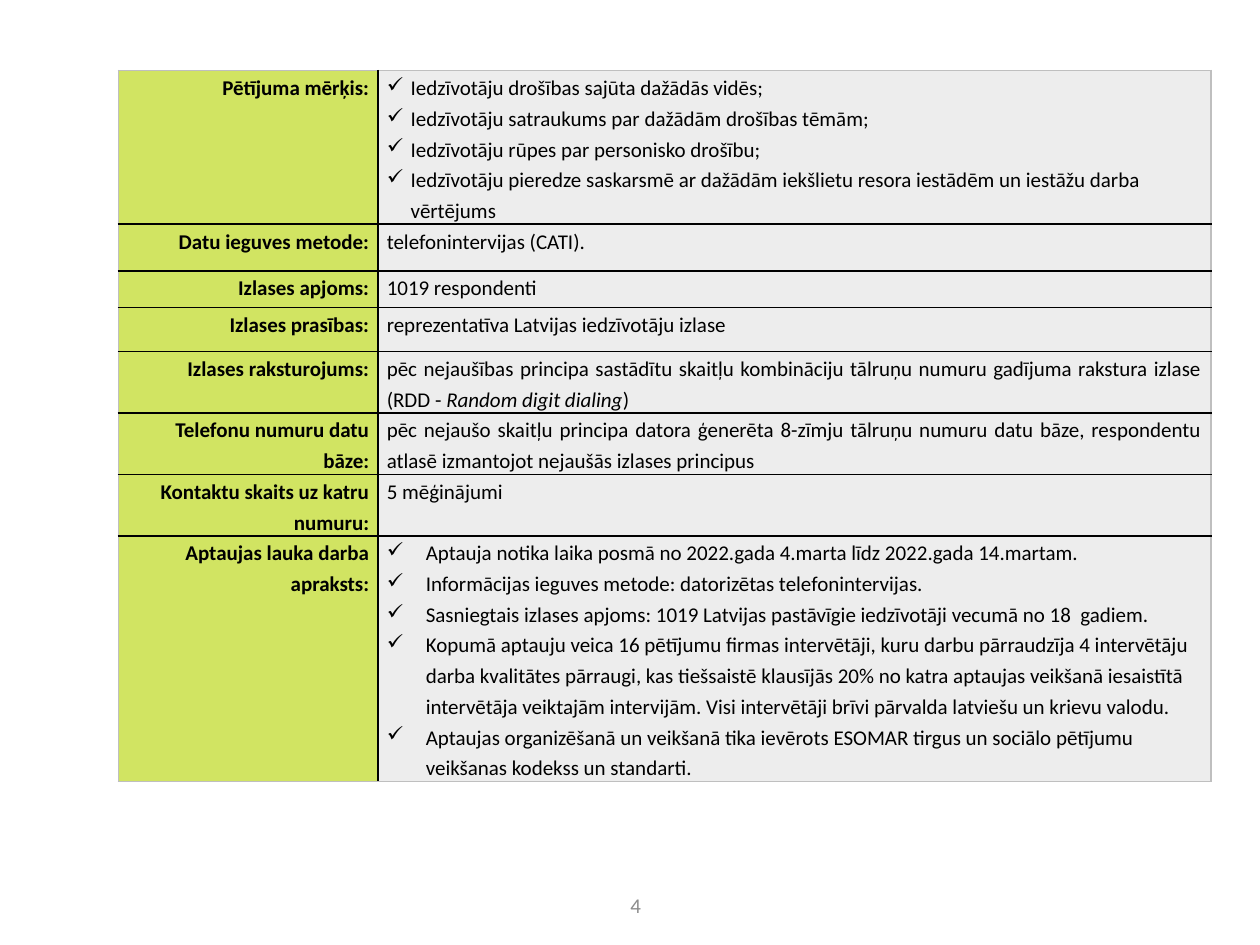
from lxml.etree import SubElement
from pptx import Presentation
from pptx.dml.color import RGBColor
from pptx.enum.text import MSO_ANCHOR, PP_ALIGN
from pptx.oxml.ns import qn
from pptx.util import Inches, Pt

BLACK = RGBColor(0x00, 0x00, 0x00)
LIME = RGBColor(0xD1, 0xE4, 0x62)
PALE = RGBColor(0xED, 0xED, 0xED)
EDGE = RGBColor(0xBF, 0xBF, 0xBF)
GREY = RGBColor(0x8C, 0x8C, 0x8C)

LEFT, RIGHT = PP_ALIGN.LEFT, PP_ALIGN.RIGHT
CENTER, FULL = PP_ALIGN.CENTER, PP_ALIGN.JUSTIFY
COLS = (2.06, 6.61)

# Row height, label, bullet indent (0 for plain text), paragraphs.
# Text between asterisks is italic.
ROWS = [
    (1.22, "Pētījuma mērķis:", 0.19, [
        "Iedzīvotāju drošības sajūta dažādās vidēs;",
        "Iedzīvotāju satraukums par dažādām drošības tēmām;",
        "Iedzīvotāju rūpes par personisko drošību;",
        "Iedzīvotāju pieredze saskarsmē ar dažādām iekšlietu resora "
        "iestādēm un iestāžu darba vērtējums"]),
    (0.37, "Datu ieguves metode:", 0, ["telefonintervijas (CATI)."]),
    (0.29, "Izlases apjoms:", 0, ["1019 respondenti"]),
    (0.35, "Izlases prasības:", 0,
     ["reprezentatīva Latvijas iedzīvotāju izlase"]),
    (0.48, "Izlases raksturojums:", 0, [
        "pēc nejaušības principa sastādītu skaitļu kombināciju tālruņu "
        "numuru gadījuma rakstura izlase (RDD - *Random digit dialing*)"]),
    (0.48, "Telefonu numuru datu bāze:", 0, [
        "pēc nejaušo skaitļu principa datora ģenerēta 8-zīmju tālruņu "
        "numuru datu bāze, respondentu atlasē izmantojot nejaušās "
        "izlases principus"]),
    (0.48, "Kontaktu skaits uz katru numuru:", 0, ["5 mēģinājumi"]),
    (1.95, "Aptaujas lauka darba apraksts:", 0.31, [
        "Aptauja notika laika posmā no 2022.gada 4.marta līdz "
        "2022.gada 14.martam.",
        "Informācijas ieguves metode: datorizētas telefonintervijas.",
        "Sasniegtais izlases apjoms: 1019 Latvijas pastāvīgie "
        "iedzīvotāji vecumā no 18  gadiem.",
        "Kopumā aptauju veica 16 pētījumu firmas intervētāji, kuru darbu "
        "pārraudzīja 4 intervētāju darba kvalitātes pārraugi, kas "
        "tiešsaistē klausījās 20% no katra aptaujas veikšanā iesaistītā "
        "intervētāja veiktajām intervijām. Visi intervētāji brīvi "
        "pārvalda latviešu un krievu valodu.",
        "Aptaujas organizēšanā un veikšanā tika ievērots ESOMAR tirgus un "
        "sociālo pētījumu veikšanas kodekss un standarti."]),
]


def set_font(font, color=BLACK, bold=False):
    for name, value in {"name": "Calibri", "size": Pt(12), "bold": bold}.items():
        setattr(font, name, value)
    font.color.rgb = color


def add_bullet(para, indent):
    props = para._p.get_or_add_pPr()
    props.set("marL", str(Inches(indent)))
    props.set("indent", str(-Inches(indent)))
    SubElement(props, qn("a:buChar"), char="✓")


def write(para, text, align, bold=False, indent=0):
    if indent:
        add_bullet(para, indent)
    para.alignment = align
    para.line_spacing = 1.2
    for i, part in enumerate(text.split("*")):
        if part:
            run = para.add_run()
            run.text = part
            set_font(run.font, bold=bold)
            run.font.italic = i % 2 == 1


def draw_borders(cell, row, col):
    """Grey around the table, black between its cells."""
    outer = {"L": col == 0, "R": col == len(COLS) - 1,
             "T": row == 0, "B": row == len(ROWS) - 1}
    props = cell._tc.get_or_add_tcPr()
    for side, edge in outer.items():
        line = SubElement(props, qn(f"a:ln{side}"), w=str(Pt(1)))
        fill = SubElement(line, qn("a:solidFill"))
        SubElement(fill, qn("a:srgbClr"), val=str(EDGE if edge else BLACK))


def style_cell(cell, row, col):
    margins = {"margin_left": 0.07, "margin_right": 0.07,
               "margin_top": 0, "margin_bottom": 0}
    for name, value in margins.items():
        setattr(cell, name, Inches(value))
    draw_borders(cell, row, col)
    cell.fill.solid()
    cell.fill.fore_color.rgb = PALE if col else LIME


def add_survey(slide):
    high = sum(row[0] for row in ROWS)
    table = slide.shapes.add_table(
        len(ROWS), len(COLS), Inches(0.94), Inches(0.56),
        Inches(sum(COLS)), Inches(high)).table
    table.first_row = table.horz_banding = False
    for col, width in zip(table.columns, COLS):
        col.width = Inches(width)
    for r, (height, label, indent, texts) in enumerate(ROWS):
        table.rows[r].height = Inches(height)
        head, body = table.cell(r, 0), table.cell(r, 1)
        style_cell(head, r, 0)
        style_cell(body, r, 1)
        write(head.text_frame.paragraphs[0], label, RIGHT, bold=True)
        frame = body.text_frame
        for i, text in enumerate(texts):
            para = frame.add_paragraph() if i else frame.paragraphs[0]
            write(para, text, LEFT if indent else FULL, indent=indent)


def add_number(slide, text):
    box = slide.shapes.add_textbox(
        Inches(4.77), Inches(7.04), Inches(0.55), Inches(0.28))
    frame = box.text_frame
    frame.word_wrap = True
    frame.vertical_anchor = MSO_ANCHOR.MIDDLE
    para = frame.paragraphs[0]
    para.alignment = CENTER
    run = para.add_run()
    run.text = text
    set_font(run.font, GREY)


def main():
    deck = Presentation()
    deck.slide_width, deck.slide_height = Inches(10), Inches(7.5)
    slide = deck.slides.add_slide(deck.slide_layouts[6])
    add_survey(slide)
    add_number(slide, "4")
    deck.save("out.pptx")


if __name__ == "__main__":
    main()
